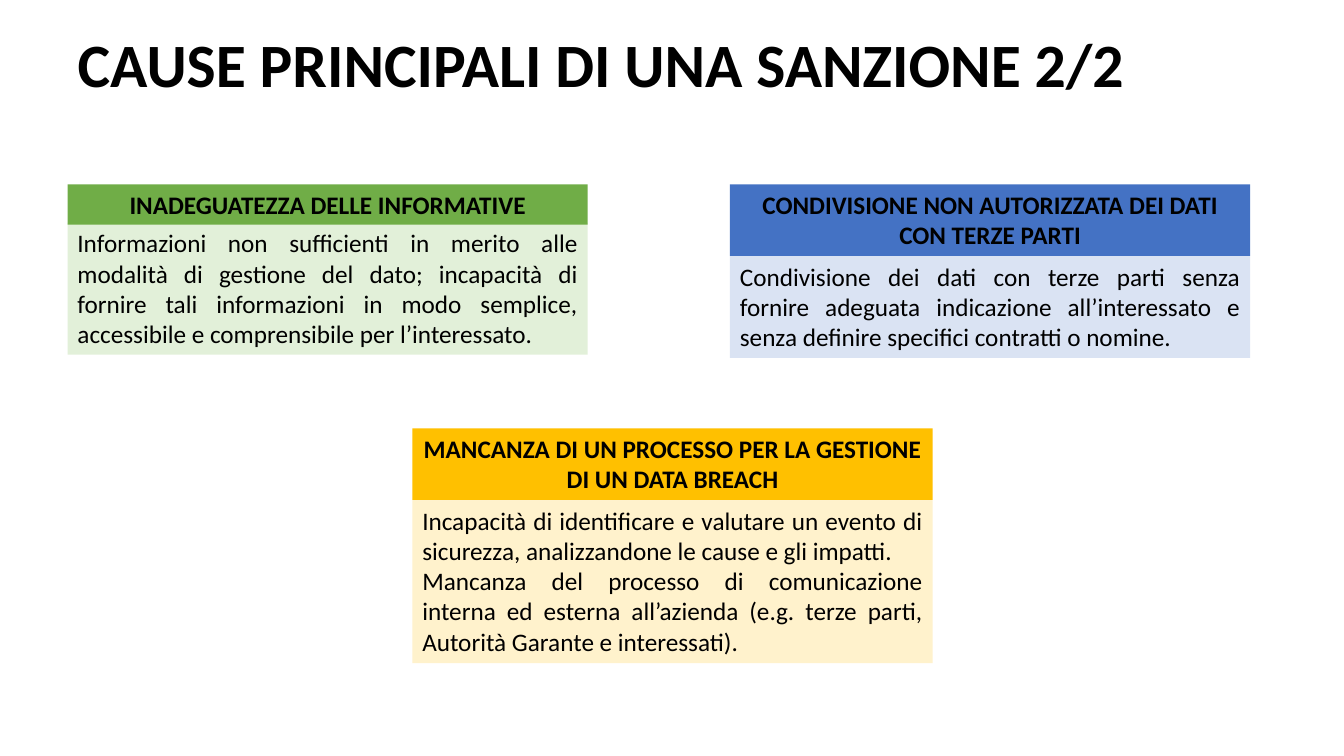
from pptx import Presentation
from pptx.dml.color import RGBColor
from pptx.enum.shapes import MSO_SHAPE as Preset
from pptx.enum.text import MSO_ANCHOR as Anchor, MSO_AUTO_SIZE as AutoSize, PP_ALIGN as Align
from pptx.util import Emu, Pt

EMU_PER_PX = 9144  # 100 px to the inch
BLACK = RGBColor(0x00, 0x00, 0x00)
GREEN = RGBColor(0x70, 0xAD, 0x47)
PALE_GREEN = RGBColor(0xE2, 0xF0, 0xD9)
BLUE = RGBColor(0x44, 0x72, 0xC4)
PALE_BLUE = RGBColor(0xDA, 0xE3, 0xF3)
AMBER = RGBColor(0xFF, 0xC0, 0x00)
PALE_AMBER = RGBColor(0xFF, 0xF2, 0xCC)

CARD_WIDTH = 516


def px(length):
    return Emu(length * EMU_PER_PX)


def write(frame, text, size=18, bold=False, align=Align.LEFT, anchor=Anchor.MIDDLE):
    """Fill a text frame, one paragraph for each line of text."""
    frame.word_wrap = True
    frame.vertical_anchor = anchor
    frame.text = text
    for para in frame.paragraphs:
        para.alignment = align
        for span in para.runs:
            span.font.name = "Calibri"
            span.font.size = Pt(size)
            span.font.bold = bold
            span.font.color.rgb = BLACK


class Slide:
    def __init__(self, deck):
        self.page = deck.slides.add_slide(deck.slide_layouts.get_by_name("Title Only"))

    def title(self, text, left, top, width, height):
        box = self.page.shapes.title
        box.left, box.top, box.width, box.height = map(px, (left, top, width, height))
        write(box.text_frame, text, size=44, bold=True)

    def panel(self, text, left, top, height, fill, **style):
        box = self.page.shapes.add_shape(
            Preset.RECTANGLE, px(left), px(top), px(CARD_WIDTH), px(height))
        box.shadow.inherit = False
        box.fill.solid()
        box.fill.fore_color.rgb = fill
        box.line.fill.background()
        write(box.text_frame, text, anchor=Anchor.TOP, **style)
        box.text_frame.auto_size = AutoSize.SHAPE_TO_FIT_TEXT

    def card(self, heading, body, left, top, heading_height, body_top, body_height, fill, pale):
        """Draw a pale body panel, then its coloured heading above it."""
        self.panel(body, left, body_top, body_height, pale, align=Align.JUSTIFY)
        self.panel(heading, left, top, heading_height, fill, bold=True, align=Align.CENTER)


def main():
    deck = Presentation()
    deck.slide_width, deck.slide_height = px(1333), px(750)
    slide = Slide(deck)
    slide.title("CAUSE PRINCIPALI DI UNA SANZIONE 2/2", 67, 0, 1184, 125)
    slide.card(
        "INADEGUATEZZA DELLE INFORMATIVE",
        "Informazioni non sufficienti in merito alle modalità di gestione del dato; "
        "incapacità di fornire tali informazioni in modo semplice, accessibile e "
        "comprensibile per l’interessato.",
        67, 183, 40, 221, 131, GREEN, PALE_GREEN)
    slide.card(
        "CONDIVISIONE NON AUTORIZZATA DEI DATI CON TERZE PARTI",
        "Condivisione dei dati con terze parti senza fornire adeguata indicazione "
        "all’interessato e senza definire specifici contratti o nomine.",
        724, 183, 71, 254, 101, BLUE, PALE_BLUE)
    slide.card(
        "MANCANZA DI UN PROCESSO PER LA GESTIONE DI UN DATA BREACH",
        "Incapacità di identificare e valutare un evento di sicurezza, analizzandone "
        "le cause e gli impatti.\n"
        "Mancanza del processo di comunicazione interna ed esterna all’azienda "
        "(e.g. terze parti, Autorità Garante e interessati).",
        409, 425, 71, 496, 162, AMBER, PALE_AMBER)
    deck.save("out.pptx")


if __name__ == "__main__":
    main()
